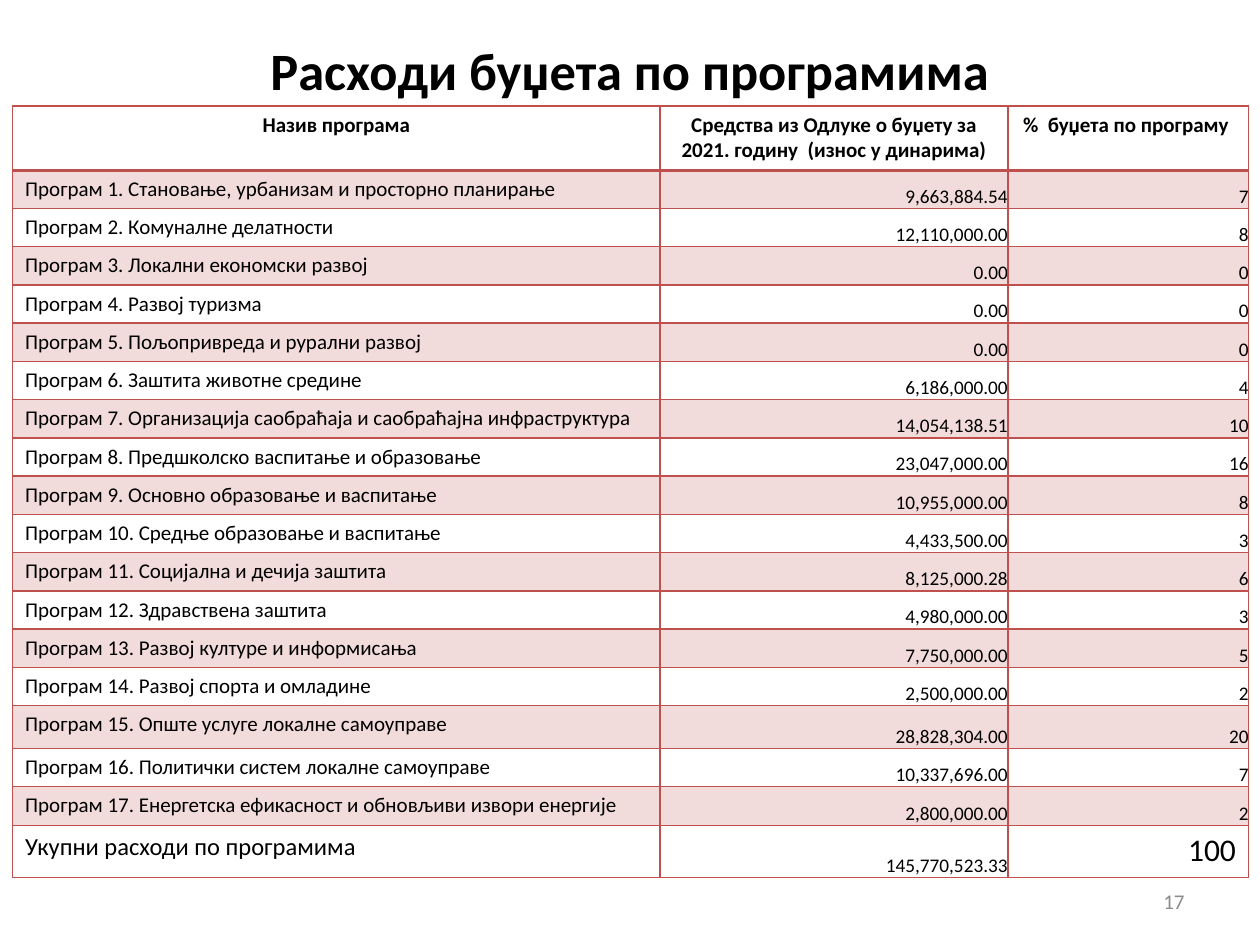
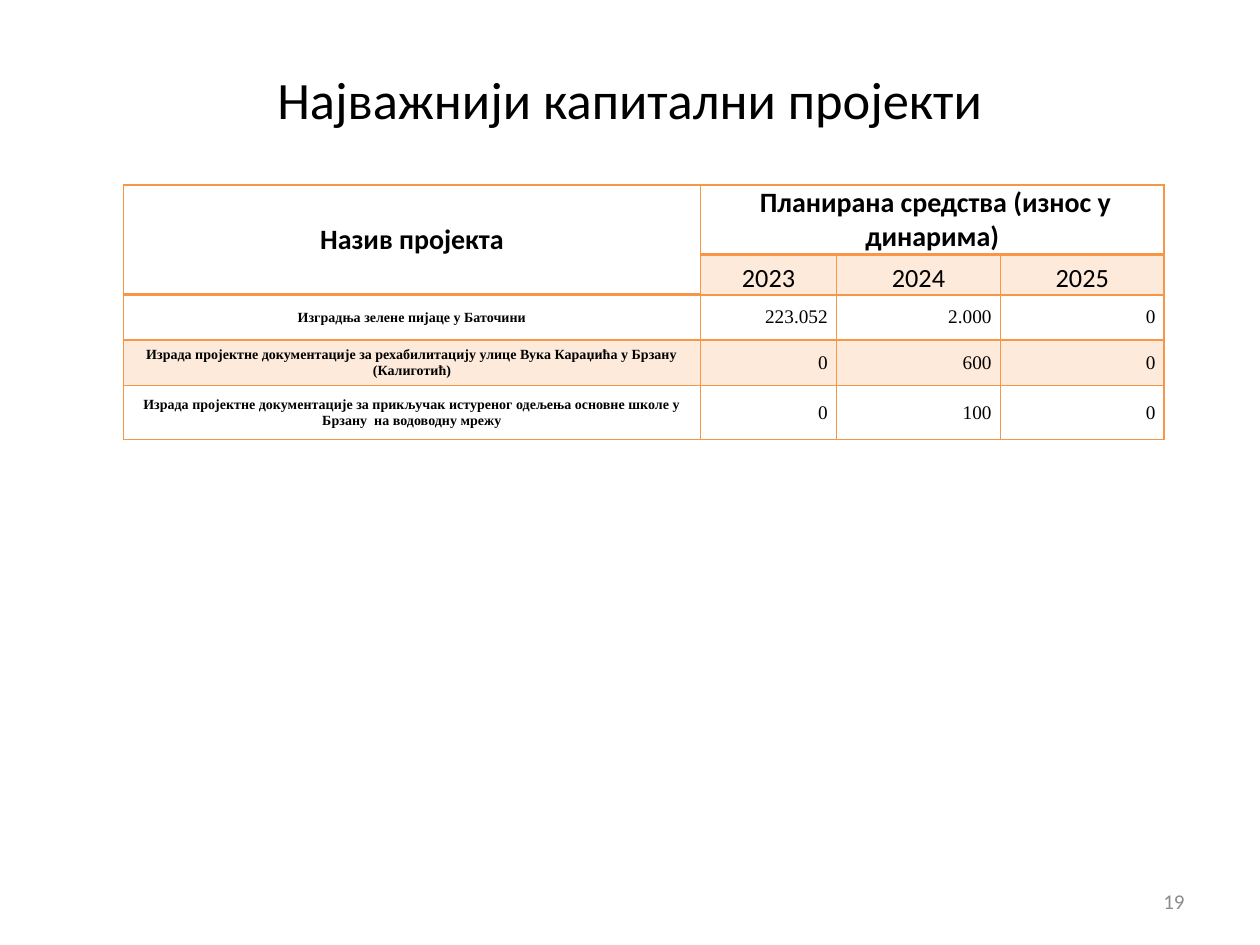
from dataclasses import dataclass

from lxml import etree
from pptx import Presentation, util as u
from pptx.dml.color import RGBColor
from pptx.enum import text
from pptx.oxml.ns import qn

Inches, Pt = u.Inches, u.Pt
LEFT, CENTER, RIGHT = (text.PP_ALIGN.LEFT, text.PP_ALIGN.CENTER,
                       text.PP_ALIGN.RIGHT)
TOP, MIDDLE, BOTTOM = (text.MSO_ANCHOR.TOP, text.MSO_ANCHOR.MIDDLE,
                       text.MSO_ANCHOR.BOTTOM)
WIDE, NONE, SLIM = (0.1, 0.05), (0, 0), (0.07, 0)


@dataclass(frozen=True)
class Theme:
    ink: str = "000000"
    muted: str = "8C8C8C"
    red: str = "C0504D"
    orange: str = "F79646"
    band_alpha: int = 20
    thin: int = 1
    thick: int = 2
    sans: str = "Calibri"
    serif: str = "Times New Roman"
    title: int = 30
    total: int = 18
    heading: int = 16
    year: int = 15
    total_name: int = 14
    body: int = 12
    figure: int = 11
    project: int = 8


T = Theme()


def look(size, align=LEFT, anchor=TOP, inset=WIDE, bold=False, font=T.sans,
         color=T.ink):
    return {"font": {"size": Pt(size), "name": font, "bold": bold},
            "color": color, "align": align, "inset": inset, "anchor": anchor}


TITLE = look(T.title, CENTER, MIDDLE)
TITLE_BOLD = look(T.title, CENTER, MIDDLE, bold=True)
PAGE = look(T.body, RIGHT, MIDDLE, color=T.muted)
HEAD = look(T.body, CENTER, bold=True)
PROGRAM = look(T.body)
FIGURE = look(T.figure, RIGHT, BOTTOM, NONE)
TOTAL_NAME = look(T.total_name)
TOTAL = look(T.total, RIGHT)
PROJECT_HEAD = look(T.heading, CENTER, MIDDLE, SLIM, True)
FUNDS_HEAD = look(T.heading, CENTER, BOTTOM, SLIM, True)
YEAR = look(T.year, CENTER, BOTTOM, SLIM)
PROJECT = look(T.project, CENTER, MIDDLE, SLIM, True, T.serif)
AMOUNT = look(T.figure, RIGHT, MIDDLE, SLIM, font=T.serif)


class Deck:
    def __init__(self, width, height):
        self.prs = Presentation()
        self.prs.slide_width, self.prs.slide_height = Inches(width), Inches(height)
        self.s = None

    def slide(self, title, box, style, page):
        self.s = self.prs.slides.add_slide(self.prs.slide_layouts[5])
        sp = self.s.shapes.title
        sp.left, sp.top, sp.width, sp.height = map(Inches, box)
        self.frame(sp.text_frame, title, style)
        box = map(Inches, (7.17, 6.95, 2.33, 0.4))
        self.frame(self.s.shapes.add_textbox(*box).text_frame, page, PAGE)

    def frame(self, tf, words, style):
        tf.word_wrap = True
        tf.auto_size = text.MSO_AUTO_SIZE.NONE
        tf.vertical_anchor = style["anchor"]
        self.put_text(tf, words, style)

    def put_text(self, tf, words, style):
        p = tf.paragraphs[0]
        p.alignment = style["align"]
        r = p.add_run()
        r.text = words
        for name, value in style["font"].items():
            setattr(r.font, name, value)
        r.font.color.rgb = RGBColor.from_string(style["color"])

    def table(self, at, cols, heights, rows, accent, head, banded, merges=()):
        """Draw rows of (words, style) cells; head gives header depth per column."""
        size = (sum(cols), sum(heights))
        table = self.s.shapes.add_table(len(rows), len(cols),
                                        *map(Inches, (*at, *size))).table
        table.first_row = table.horz_banding = False
        for col, width in zip(table.columns, cols):
            col.width = Inches(width)
        for row, height in zip(table.rows, heights):
            row.height = Inches(height)
        for first, last in merges:
            table.cell(*first).merge(table.cell(*last))
        for i, row in enumerate(rows):
            for j, content in enumerate(row):
                cell = table.cell(i, j)
                if content:
                    self.cell(cell, *content)
                self.fill(cell, accent if i in banded and content else None)
                self.borders(cell, accent, i == head[j], i < head[j])

    def cell(self, cell, words, style):
        x, y = map(Inches, style["inset"])
        for name, value in {"margin_left": x, "margin_right": x,
                            "margin_top": y, "margin_bottom": y,
                            "vertical_anchor": style["anchor"]}.items():
            setattr(cell, name, value)
        self.put_text(cell.text_frame, words, style)

    def fill(self, cell, color):
        if color is None:
            cell.fill.background()
            return
        cell.fill.solid()
        cell.fill.fore_color.rgb = RGBColor.from_string(color)
        clr = cell._tc.tcPr.find(".//" + qn("a:srgbClr"))
        etree.SubElement(clr, qn("a:alpha"), val=str(T.band_alpha * 1000))

    def borders(self, cell, color, thick_top, thick_bottom):
        sides = {"L": False, "R": False, "T": thick_top, "B": thick_bottom}
        for i, (side, thick) in enumerate(sides.items()):
            width = Pt(T.thick if thick else T.thin)
            ln = etree.Element(qn("a:ln" + side), w=str(width))
            solid = etree.SubElement(ln, qn("a:solidFill"))
            etree.SubElement(solid, qn("a:srgbClr"), val=color)
            cell._tc.get_or_add_tcPr().insert(i, ln)


PROGRAMS = [
    ("Становање, урбанизам и просторно планирање", "9,663,884.54", "7"),
    ("Комуналне делатности", "12,110,000.00", "8"),
    ("Локални економски развој", "0.00", "0"),
    ("Развој туризма", "0.00", "0"),
    ("Пољопривреда и рурални развој", "0.00", "0"),
    ("Заштита животне средине", "6,186,000.00", "4"),
    ("Организација саобраћаја и саобраћајна инфраструктура", "14,054,138.51", "10"),
    ("Предшколско васпитање и образовање", "23,047,000.00", "16"),
    ("Основно образовање и васпитање", "10,955,000.00", "8"),
    ("Средње образовање и васпитање", "4,433,500.00", "3"),
    ("Социјална и дечија заштита", "8,125,000.28", "6"),
    ("Здравствена заштита", "4,980,000.00", "3"),
    ("Развој културе и информисања", "7,750,000.00", "5"),
    ("Развој спорта и омладине", "2,500,000.00", "2"),
    ("Опште услуге локалне самоуправе", "28,828,304.00", "20"),
    ("Политички систем локалне самоуправе", "10,337,696.00", "7"),
    ("Енергетска ефикасност и обновљиви извори енергије", "2,800,000.00", "2"),
]
PROJECTS = [
    ("Изградња зелене пијаце у Баточини", "223.052", "2.000", "0"),
    ("Израда пројектне документације за рехабилитацију улице Вука Караџића "
     "у Брзану (Калиготић)", "0", "600", "0"),
    ("Израда пројектне документације за прикључак истуреног одељења основне "
     "школе у Брзану  на водоводну мрежу", "0", "100", "0"),
]


def programs_slide(deck):
    deck.slide("Расходи буџета по програмима", (0.74, 0.13, 8.52, 0.85),
               TITLE_BOLD, "17")
    heads = ("Назив програма",
             "Средства из Одлуке о буџету за 2021. годину  (износ у динарима)",
             "%  буџета по програму ")
    rows = [[(words, HEAD) for words in heads]]
    for n, (name, amount, share) in enumerate(PROGRAMS, 1):
        rows.append([(f"Програм {n}. {name}", PROGRAM),
                     (amount, FIGURE), (share, FIGURE)])
    rows.append([("Укупни расходи по програмима", TOTAL_NAME),
                 ("145,770,523.33", FIGURE), ("100", TOTAL)])
    heights = [0.51] + [0.3] * 14 + [0.34, 0.3, 0.31, 0.41]
    deck.table((0.1, 0.84), (5.14, 2.76, 1.91), heights, rows, T.red,
               head=(1, 1, 1), banded=range(1, len(PROGRAMS) + 1, 2))


def projects_slide(deck):
    deck.slide("Најважнији капитални пројекти", (0.5, 0.3, 9, 0.96), TITLE, "19")
    rows = [[("Назив пројекта", PROJECT_HEAD),
             (" Планирана средства (износ у динарима)", FUNDS_HEAD), None, None],
            [None] + [(year, YEAR) for year in ("2023", "2024", "2025")]]
    for name, *amounts in PROJECTS:
        rows.append([(name, PROJECT)] + [(amount, AMOUNT) for amount in amounts])
    deck.table((0.98, 1.47), (4.58, 1.08, 1.3, 1.3),
               (0.55, 0.32, 0.36, 0.36, 0.43), rows, T.orange,
               head=(2, 1, 1, 1), banded=(1, 3),
               merges=(((0, 0), (1, 0)), ((0, 1), (0, 3))))


def main():
    deck = Deck(10, 7.5)
    programs_slide(deck)
    projects_slide(deck)
    deck.prs.save("out.pptx")


if __name__ == "__main__":
    main()
